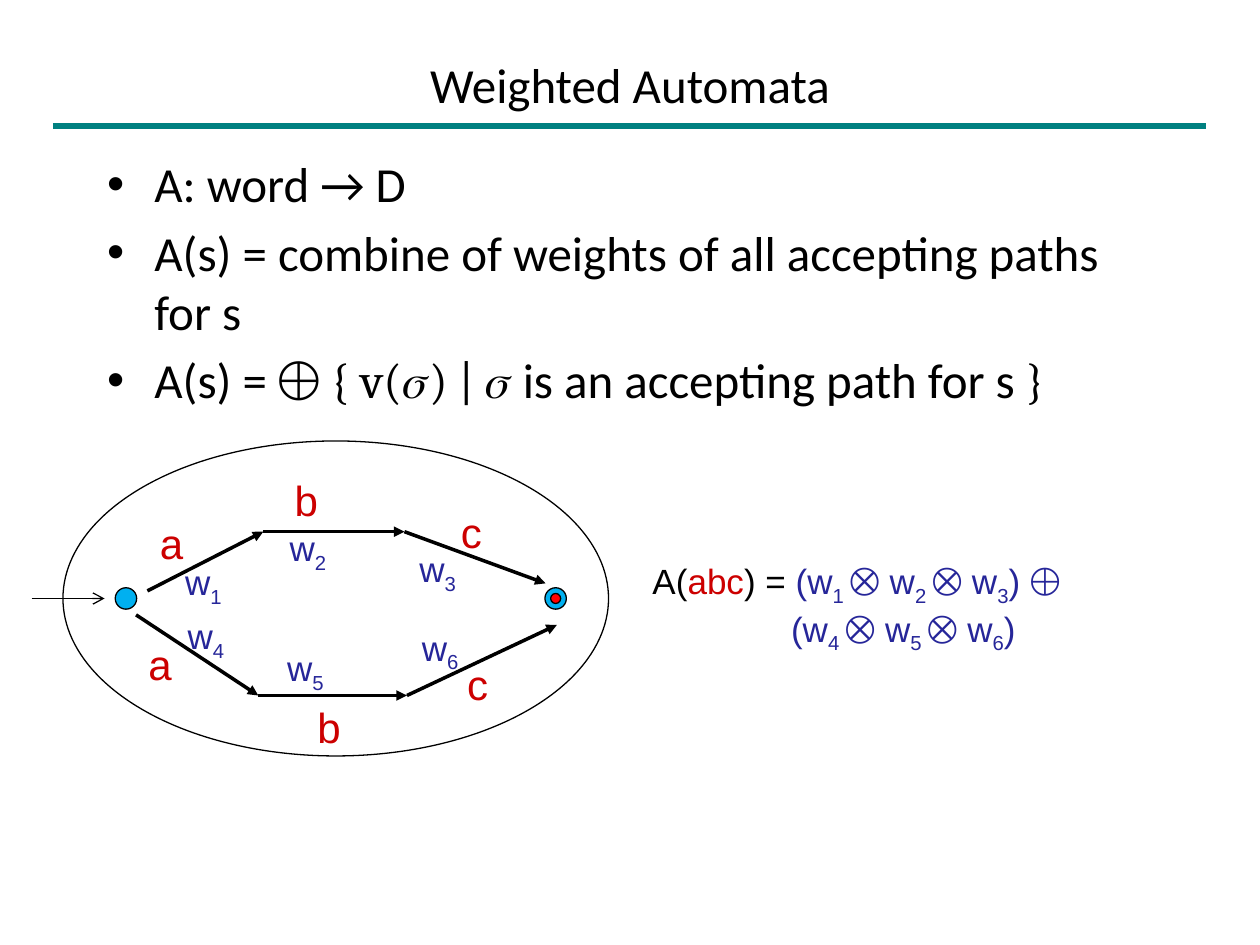
from itertools import pairwise

from lxml.etree import SubElement
from pptx import Presentation
from pptx.dml.color import RGBColor as RGB
from pptx.enum.shapes import MSO_CONNECTOR as Connector, MSO_SHAPE as Shape
from pptx.enum.text import MSO_ANCHOR as Anchor, MSO_AUTO_SIZE as AutoSize, PP_ALIGN as Align
from pptx.oxml.ns import qn
from pptx.util import Inches, Pt

BLACK, RED, BLUE, CYAN, TEAL = "000000", "CC0000", "262699", "00B0F0", "008080"
HEADING = {"name": "Calibri", "size": Pt(28)}
MATH = HEADING | {"name": "Cambria"}
LETTER = {"name": "Arial", "size": Pt(24)}
WEIGHT = {"name": "Arial", "size": Pt(20)}
OPERATOR = WEIGHT | {"name": "Cambria"}


def paint(color_format, color):
    """Set a font, fill or line colour from a hex string."""
    color_format.rgb = RGB.from_string(color)


def add_run(paragraph, text, style, color=BLACK, subscript=False):
    """Append a formatted run to a paragraph."""
    run = paragraph.add_run()
    run.text = text
    for name, value in style.items():
        setattr(run.font, name, value)
    paint(run.font.color, color)
    if subscript:
        run.font._element.set("baseline", "-25000")


def add_weight(paragraph, index, gap=""):
    """Append a weight symbol with its subscript index."""
    add_run(paragraph, "w", WEIGHT, BLUE)
    add_run(paragraph, f"{index}{gap}", WEIGHT, BLUE, subscript=True)


def add_product(paragraph, indices):
    """Append a bracketed product of weights."""
    add_run(paragraph, "(", WEIGHT, BLUE)
    for index in indices:
        last = index == indices[-1]
        add_weight(paragraph, index, "" if last else " ")
        if not last:
            add_run(paragraph, "⨂", OPERATOR, BLUE)
            add_run(paragraph, " ", WEIGHT, BLUE)
    add_run(paragraph, ")", WEIGHT, BLUE)


def place(shape, box):
    """Move and size a shape to a box given in inches."""
    for name, value in zip(("left", "top", "width", "height"), box):
        setattr(shape, name, Inches(value))


def add_line(shapes, start, end, color, width, head=None):
    """Draw a straight line, with an optional arrowhead at its end."""
    line = shapes.add_connector(Connector.STRAIGHT, *map(Inches, (*start, *end)))
    line.line.width = Pt(width)
    paint(line.line.color, color)
    if head:
        SubElement(line.line._get_or_add_ln(), qn("a:tailEnd"), type=head)
    SubElement(line._element.spPr, qn("a:effectLst"))


def add_ellipse(shapes, box, fill=None):
    """Draw a thinly outlined ellipse."""
    ellipse = shapes.add_shape(Shape.OVAL, *map(Inches, box))
    ellipse.shadow.inherit = False
    if fill:
        ellipse.fill.solid()
        paint(ellipse.fill.fore_color, fill)
    else:
        ellipse.fill.background()
    paint(ellipse.line.color, BLACK)
    ellipse.line.width = Pt(0.75)


def add_text(shapes, box, wrap):
    """Add a growing text box and return its text frame."""
    frame = shapes.add_textbox(*map(Inches, box)).text_frame
    frame.word_wrap = wrap
    frame.auto_size = AutoSize.SHAPE_TO_FIT_TEXT
    return frame


def build_title(slide, box):
    """Fill the title and draw the rule under it."""
    title = slide.shapes.title
    place(title, box)
    title.text_frame.vertical_anchor = Anchor.MIDDLE
    title.text_frame.auto_size = AutoSize.NONE
    heading = title.text_frame.paragraphs[0]
    heading.alignment = Align.CENTER
    add_run(heading, "Weighted Automata", HEADING)
    left, top, width, height = box
    rule = top + height
    add_line(slide.shapes, (left - 0.33, rule), (left + width + 0.32, rule), TEAL, 4)


def build_definitions(slide, box):
    """Fill the bulleted definitions."""
    body = slide.placeholders[1]
    place(body, box)
    frame = body.text_frame
    frame.auto_size = AutoSize.NONE
    definitions = [
        [("A: word → D", HEADING)],
        [("A(s) = combine of weights of all accepting paths for s", HEADING)],
        [("A(s) = ", HEADING), ("⨁ { v(𝜎) | 𝜎 ", MATH),
         ("is an accepting path for s ", HEADING), ("}", MATH)],
    ]
    for position, parts in enumerate(definitions):
        definition = frame.add_paragraph() if position else frame.paragraphs[0]
        for text, style in parts:
            add_run(definition, text, style)


def build_formula(slide, box):
    """Write the weight of the word abc over both paths."""
    frame = add_text(slide.shapes, box, True)
    upper, lower = frame.paragraphs[0], frame.add_paragraph()
    add_run(upper, "A(", WEIGHT)
    add_run(upper, "abc", WEIGHT, RED)
    add_run(upper, ") = ", WEIGHT)
    add_product(upper, (1, 2, 3))
    add_run(upper, " ", WEIGHT, BLUE)
    add_run(upper, "⨁", OPERATOR, BLUE)
    lower._p.get_or_add_pPr().set("marL", str(Inches(1.1)))
    add_product(lower, (4, 5, 6))


def build_path(shapes, left, top, path):
    """Draw one accepting path with its letters and weights."""
    points = [(left + x, top + y) for x, y in path["points"]]
    for start, end in pairwise(points):
        add_line(shapes, start, end, BLACK, 2, "triangle")
    for letter, (x, y) in zip("abc", path["letters"]):
        frame = add_text(shapes, (left + x, top + y, 0.48, 0.5), path["wrap"])
        add_run(frame.paragraphs[0], letter, LETTER, RED)
    for index, (x, y) in enumerate(path["weights"], path["first"]):
        frame = add_text(shapes, (left + x, top + y, path["width"], 0.44), path["wrap"])
        add_weight(frame.paragraphs[0], index)


def build_automaton(slide, box):
    """Draw the automaton with its two accepting paths."""
    left, top, width, height = box
    middle = top + height / 2
    shapes = slide.shapes.add_group_shape().shapes
    add_ellipse(shapes, box)
    for center, size, fill in ((0.5, 0.17, CYAN), (3.91, 0.17, CYAN), (3.91, 0.08, "FF0000")):
        add_ellipse(shapes, (left + center - size / 2, middle - size / 2, size, size), fill)
    add_line(shapes, (left - 0.25, middle), (left + 0.33, middle), BLACK, 0.75, "arrow")
    paths = [
        {"points": [(0.67, 1.19), (1.59, 0.72), (2.71, 0.72), (3.83, 1.13)],
         "letters": [(0.67, 0.56), (1.74, 0.22), (3.06, 0.47)],
         "weights": [(0.87, 0.9), (1.7, 0.63), (2.73, 0.8)],
         "first": 1, "width": 0.51, "wrap": False},
        {"points": [(0.58, 1.38), (1.55, 2.02), (2.73, 2.02), (3.92, 1.46)],
         "letters": [(0.58, 1.52), (1.92, 2.02), (3.11, 1.68)],
         "weights": [(0.89, 1.33), (1.68, 1.58), (2.75, 1.42)],
         "first": 4, "width": 0.66, "wrap": True},
    ]
    for path in paths:
        build_path(shapes, left, top, path)


def main():
    """Build and save the slide."""
    deck = Presentation()
    deck.slide_width, deck.slide_height = Inches(10), Inches(7.5)
    slide = deck.slides.add_slide(deck.slide_layouts[1])
    build_title(slide, (0.75, 0.33, 8.5, 0.67))
    build_definitions(slide, (0.75, 1.17, 8.5, 1))
    build_formula(slide, (5.08, 4.39, 4.42, 0.77))
    build_automaton(slide, (0.5, 3.5, 4.33, 2.5))
    deck.save("out.pptx")


if __name__ == "__main__":
    main()
